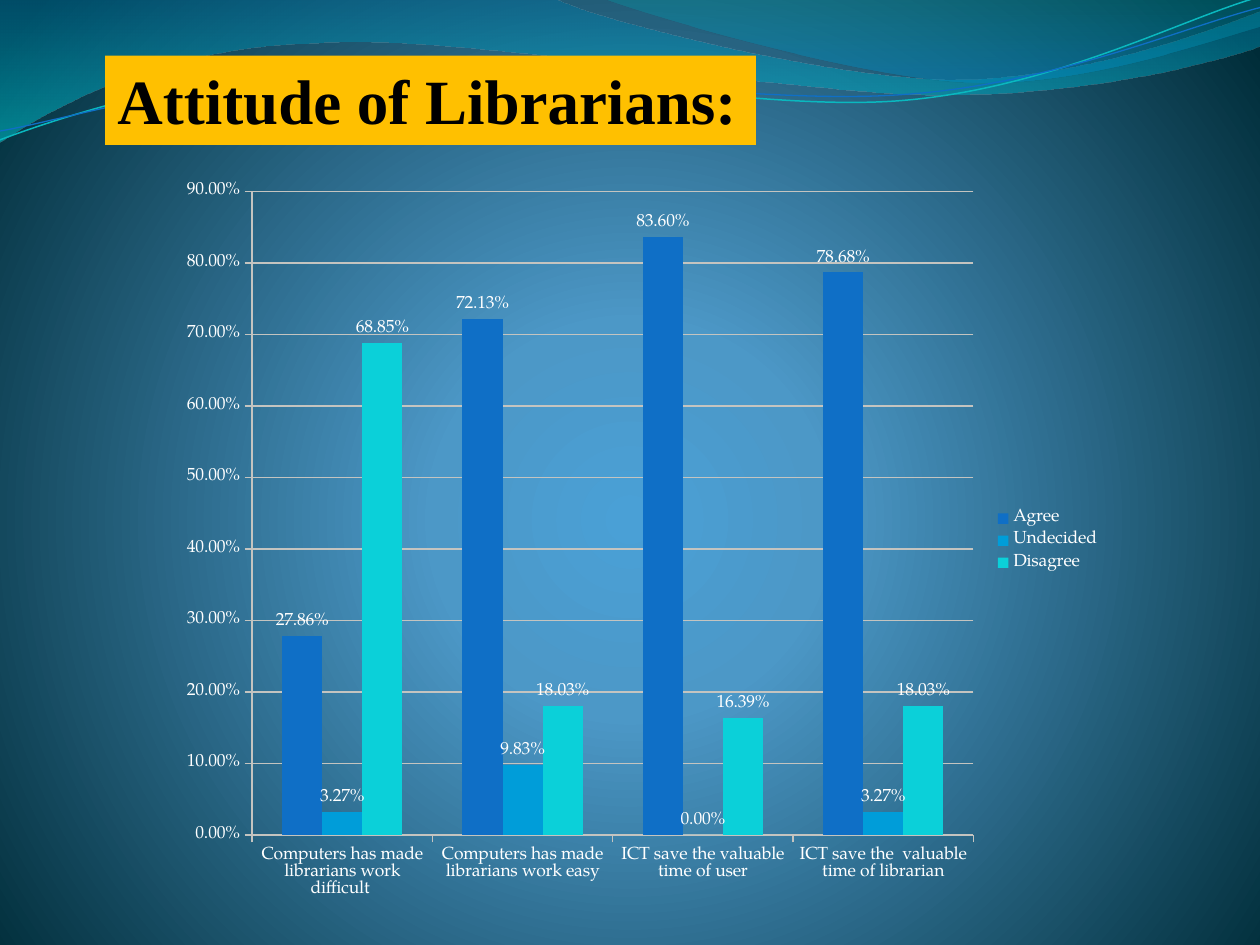
import dataclasses
import math
import pptx
import pptx.chart.data
import pptx.dml.color
import pptx.enum.chart
import pptx.enum.text
import pptx.oxml
import pptx.oxml.ns
import pptx.util


@dataclasses.dataclass(frozen=True)
class Theme:
    ink: str = "000000"
    light: str = "FFFFFF"
    gold: str = "FFC000"
    rule: str = "C4C4C0"
    blue: str = "0F6FC6"
    sky: str = "009DD9"
    aqua: str = "0BD0D9"
    teal: str = "0AB8BF"
    head: str = "Times New Roman"
    body: str = "TeX Gyre Pagella"
    big: int = 36
    small: int = 10
    glow: tuple = ((0, "4AA0D6", 100), (25, "4C98C7", 100), (100, "002C38", 100))
    wave: tuple = ((0, "0074A1", 45), (100, "00C6CF", 55))
    crest: tuple = ((0, "00A1A9", 30), (80, "008BBF", 45))


def rgb(code):
    return pptx.dml.color.RGBColor.from_string(code)


class Deck:
    cols, rows = 120, 90

    def __init__(self, theme):
        self.theme = theme
        self.show = pptx.Presentation()
        self.show.slide_width = pptx.util.Inches(10)
        self.show.slide_height = pptx.util.Inches(7.5)
        self.slide = self.show.slides.add_slide(self.show.slide_layouts[6])

    def box(self, x, y, wide, high):
        col = self.show.slide_width / self.cols
        row = self.show.slide_height / self.rows
        return [pptx.util.Emu(round(n)) for n in (x * col, y * row, wide * col, high * row)]

    def blend(self, item, fill, stops, shade):
        fill.solid()
        marks = ""
        for at, code, alpha in stops:
            clear = f'<a:alpha val="{alpha * 1000}"/>' if alpha < 100 else ""
            marks += f'<a:gs pos="{at * 1000}"><a:srgbClr val="{code}">{clear}</a:srgbClr></a:gs>'
        space = pptx.oxml.ns.nsdecls("a")
        grad = pptx.oxml.parse_xml(
            f'<a:gradFill {space} rotWithShape="1"><a:gsLst>{marks}</a:gsLst>{shade}</a:gradFill>')
        old = next(item.element.iter(pptx.oxml.ns.qn("a:solidFill")))
        old.getparent().replace(old, grad)

    def back(self):
        shade = ('<a:path path="circle"><a:fillToRect l="10000" t="110000" '
                 'r="10000" b="100000"/></a:path>')
        self.blend(self.slide, self.slide.background.fill, self.theme.glow, shade)

    def turn(self, dot, pivot, angle):
        x, y = dot[0] - pivot[0], dot[1] - pivot[1]
        cos, sin = math.cos(math.radians(angle)), math.sin(math.radians(angle))
        return pivot[0] + x * cos - y * sin, pivot[1] + x * sin + y * cos

    def bend(self, shape, parts):
        qn = pptx.oxml.ns.qn
        legs = iter(list(shape.element.iter(qn("a:lnTo"))))
        for part in parts:
            group = [next(legs) for _ in range(len(part) // 2)]
            if len(group) == 3:
                cubic = pptx.oxml.parse_xml(f'<a:cubicBezTo {pptx.oxml.ns.nsdecls("a")}/>')
                group[0].addprevious(cubic)
                for leg in group:
                    cubic.append(leg[0])
                    leg.getparent().remove(leg)

    def curve(self, start, parts, stops=None, line=None, width=0, pivot=(0, 0), tilt=0):
        unit = self.show.slide_width / 1000
        dots = [start] + [part[i:i + 2] for part in parts for i in range(0, len(part), 2)]
        dots = [self.turn(dot, pivot, -tilt) for dot in dots]
        dots = [(round(x * unit), round(y * unit)) for x, y in dots]
        pen = self.slide.shapes.build_freeform(*dots[0])
        pen.add_line_segments(dots[1:], close=False)
        shape = pen.convert_to_shape()
        self.bend(shape, parts)
        shape.rotation = tilt
        shape.shadow.inherit = False
        if stops:
            shape.line.fill.background()
            self.blend(shape, shape.fill, stops, '<a:lin ang="5400000" scaled="0"/>')
        else:
            shape.fill.background()
            shape.line.color.rgb = rgb(line)
            shape.line.width = pptx.util.Pt(width)

    def title(self, area, text):
        shape = self.slide.shapes.add_textbox(*self.box(*area))
        shape.fill.solid()
        shape.fill.fore_color.rgb = rgb(self.theme.gold)
        frame = shape.text_frame
        frame.word_wrap = False
        frame.auto_size = pptx.enum.text.MSO_AUTO_SIZE.SHAPE_TO_FIT_TEXT
        run = frame.paragraphs[0].add_run()
        run.text = text
        run.font.name = self.theme.head
        run.font.size = pptx.util.Pt(self.theme.big)
        run.font.bold = True
        run.font.color.rgb = rgb(self.theme.ink)

    def rule(self, line):
        line.color.rgb = rgb(self.theme.rule)
        line.width = pptx.util.Pt(0.75)

    def chart(self, area, cats, series, top):
        kinds = pptx.enum.chart
        data = pptx.chart.data.CategoryChartData(number_format="0.00%")
        data.categories = cats
        for name, vals, _ in series:
            data.add_series(name, vals)
        chart = self.slide.shapes.add_chart(
            kinds.XL_CHART_TYPE.COLUMN_CLUSTERED, *self.box(*area), data).chart
        chart.font.name = self.theme.body
        chart.font.size = pptx.util.Pt(self.theme.small)
        chart.font.color.rgb = rgb(self.theme.light)
        chart.has_title = False
        chart.has_legend = True
        chart.legend.position = kinds.XL_LEGEND_POSITION.RIGHT
        chart.legend.include_in_layout = False
        plot = chart.plots[0]
        plot.vary_by_categories = False
        plot.gap_width, plot.overlap = 150, 0
        for axis in (chart.category_axis, chart.value_axis):
            axis.major_tick_mark = kinds.XL_TICK_MARK.OUTSIDE
            self.rule(axis.format.line)
        axis = chart.value_axis
        axis.minimum_scale, axis.maximum_scale, axis.major_unit = 0, top, 0.1
        axis.tick_labels.number_format = "0.00%"
        axis.tick_labels.number_format_is_linked = False
        self.rule(axis.major_gridlines.format.line)
        for bar, (_, _, code) in zip(plot.series, series):
            bar.format.fill.solid()
            bar.format.fill.fore_color.rgb = rgb(code)
            tags = bar.data_labels
            tags.show_value = True
            tags.number_format = "0.00%"
            tags.number_format_is_linked = False
            tags.position = kinds.XL_LABEL_POSITION.OUTSIDE_END


def main():
    theme = Theme()
    deck = Deck(theme)
    deck.back()
    deck.curve((0, 0), [
        (440, -1), (476, 17, 664, 63, 758, 63), (853, 63, 958, 26, 1000, 9),
        (1001, 36), (983, 44, 870, 76, 746, 75), (622, 75, 382, 28, 257, 34),
        (129, 36, 46, 83, -1, 113), (0, 0)], stops=theme.wave)
    deck.curve((479, -1), [
        (509, 11, 682, 62, 769, 65), (856, 69, 961, 32, 1000, 21),
        (1000, 0), (479, -1)], stops=theme.crest)
    deck.curve((0, 111), [
        (48, 93, 158, 57, 277, 52), (395, 47, 593, 89, 713, 80),
        (833, 71, 938, 15, 998, -2)],
        line=theme.teal, width=0.85, pivot=(499, 57.5), tilt=357.3)
    deck.curve((0, 104), [
        (47, 96, 164, 61, 283, 56), (403, 51, 597, 84, 717, 75),
        (836, 67, 941, 21, 1000, 6)],
        line=theme.blue, width=0.75, pivot=(499.5, 59), tilt=357.3)
    deck.title((10, 5.3, 62, 8.5), "Attitude of Librarians:")
    cats = ["Computers has made librarians work difficult ",
            "Computers has made librarians work easy",
            "ICT save the valuable time of user",
            "ICT save the  valuable time of librarian"]
    series = [("Agree", (0.2786, 0.7213, 0.836, 0.7868), theme.blue),
              ("Undecided", (0.0327, 0.0983, 0, 0.0327), theme.sky),
              ("Disagree", (0.6885, 0.1803, 0.1639, 0.1803), theme.aqua)]
    deck.chart((16, 16, 90, 71), cats, series, 0.9)
    deck.show.save("out.pptx")


if __name__ == "__main__":
    main()
